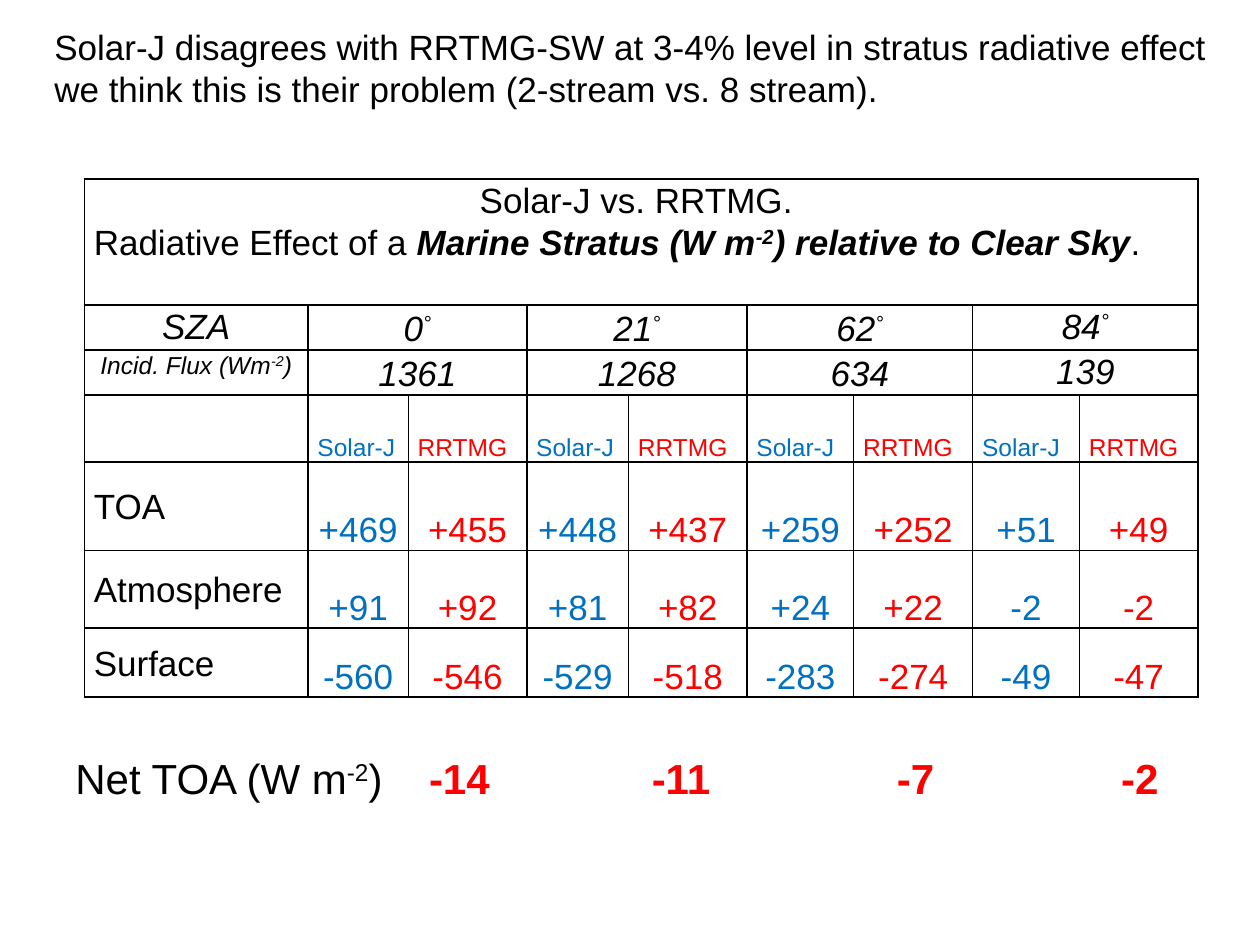
"""Build a slide comparing Solar-J and RRTMG radiative effects of marine stratus."""
from lxml.etree import SubElement
from pptx import Presentation
from pptx.dml.color import RGBColor
from pptx.enum.text import MSO_ANCHOR, MSO_AUTO_SIZE, PP_ALIGN
from pptx.oxml.ns import qn
from pptx.util import Cm, Pt

COLORS = {"text": "000000", "solar": "0070C0", "rrtmg": "FF0000"}
MODELS = [("Solar-J", "solar"), ("RRTMG", "rrtmg")]
COL_WIDTHS = [4.51, 2.02, 2.39, 2.05, 2.39, 2.15, 2.4, 2.15, 2.39]
ROW_HEIGHTS = [2.54, 0.85, 0.89, 1.35, 1.78, 1.57, 1.39]
ANGLES = ["0", "21", "62", "84"]
FLUXES = ["1361", "1268", "634", "139"]
EFFECTS = [
    ("TOA", ["+469", "+455", "+448", "+437", "+259", "+252", "+51", "+49"]),
    ("Atmosphere", ["+91", "+92", "+81", "+82", "+24", "+22", "-2", "-2"]),
    ("Surface", ["-560", "-546", "-529", "-518", "-283", "-274", "-49", "-47"]),
]
NET_TOA = ["-14", "-11", "-7", "-2"]
NET_TABS = [7.13, 11.62, 16.56, 21.08]
SUP = {"sup": True}


class Deck:
    def __init__(self, width, height, font="Arial"):
        self.font = font
        self.prs = Presentation()
        self.prs.slide_width, self.prs.slide_height = Cm(width), Cm(height)
        self.s = self.prs.slides.add_slide(self.prs.slide_layouts[5])

    def style(self, r, size=20, color="text", bold=False, italic=False, sup=False):
        f = r.font
        f.name, f.size, f.bold, f.italic = self.font, Pt(size), bold, italic
        f.color.rgb = RGBColor.from_string(COLORS[color])
        if sup:
            r._r.get_or_add_rPr().set("baseline", "30000")

    def add_runs(self, p, runs, align=PP_ALIGN.LEFT, **base):
        p.alignment = align
        for text, extra in runs:
            r = p.add_run()
            r.text = text
            self.style(r, **{**base, **extra})

    def title(self, text, x, y, w, h, size=20):
        sp = self.s.shapes.title
        sp.left, sp.top, sp.width, sp.height = Cm(x), Cm(y), Cm(w), Cm(h)
        tf = sp.text_frame
        tf.text = text
        tf.vertical_anchor = MSO_ANCHOR.TOP
        tf.word_wrap = True
        tf.auto_size = MSO_AUTO_SIZE.SHAPE_TO_FIT_TEXT
        p = tf.paragraphs[0]
        p.alignment = PP_ALIGN.LEFT
        for r in p.runs:
            self.style(r, size)
        for br in p._p.findall(qn("a:br")):
            SubElement(br, qn("a:rPr"), sz=str(size * 100))

    def tabbed_text(self, runs, x, y, w, h, tabs, size):
        tf = self.s.shapes.add_textbox(Cm(x), Cm(y), Cm(w), Cm(h)).text_frame
        tf.word_wrap = True
        tf.auto_size = MSO_AUTO_SIZE.SHAPE_TO_FIT_TEXT
        p = tf.paragraphs[0]
        self.add_runs(p, runs, size=size)
        tab_list = SubElement(p._p.get_or_add_pPr(), qn("a:tabLst"))
        for pos in tabs:
            SubElement(tab_list, qn("a:tab"), pos=str(Cm(pos)), algn="l")

    def table(self, x, y, widths, heights):
        frame = self.s.shapes.add_table(len(heights), len(widths), Cm(x), Cm(y),
                                        Cm(sum(widths)), Cm(sum(heights)))
        table = frame.table
        table.first_row = table.horz_banding = False
        for col, w in zip(table.columns, widths):
            col.width = Cm(w)
        for row, h in zip(table.rows, heights):
            row.height = Cm(h)
        for cell in table.iter_cells():
            cell.margin_left = cell.margin_right = Cm(0.19)
            cell.margin_top = cell.margin_bottom = 0
            self.border(cell)
            cell.fill.background()
        return table

    def border(self, cell):
        for side in ("lnL", "lnR", "lnT", "lnB"):
            ln = SubElement(cell._tc.get_or_add_tcPr(), qn(f"a:{side}"), w=str(Pt(1)))
            fill = SubElement(ln, qn("a:solidFill"))
            SubElement(fill, qn("a:srgbClr"), val=COLORS["text"])

    def cell(self, cell, paragraphs, anchor=MSO_ANCHOR.TOP, **base):
        cell.vertical_anchor = anchor
        tf = cell.text_frame
        for i, (align, runs) in enumerate(paragraphs):
            p = tf.add_paragraph() if i else tf.paragraphs[0]
            p.line_spacing = 1.07
            self.add_runs(p, runs, align, **base)


def fill_table(deck, table):
    left, center = PP_ALIGN.LEFT, PP_ALIGN.CENTER
    strong = {"bold": True, "italic": True}
    table.cell(0, 0).merge(table.cell(0, 8))
    deck.cell(table.cell(0, 0), [
        (center, [("Solar-J vs. RRTMG. ", {})]),
        (left, [("Radiative Effect of a ", {}), ("Marine Stratus (W m", strong),
                ("-2", {**strong, **SUP}), (") relative to Clear Sky", strong), (".", {})]),
    ])
    deck.cell(table.cell(1, 0), [(center, [("SZA", {})])], italic=True)
    flux_label = [("Incid. Flux (Wm", {}), ("-2", SUP), (")", {})]
    deck.cell(table.cell(2, 0), [(center, flux_label)], size=14, italic=True)
    for i, (angle, flux) in enumerate(zip(ANGLES, FLUXES)):
        col = 1 + 2 * i
        anchor = MSO_ANCHOR.TOP if i == len(ANGLES) - 1 else MSO_ANCHOR.MIDDLE
        for row, runs in ((1, [(angle, {}), ("°", SUP)]), (2, [(flux, {})])):
            table.cell(row, col).merge(table.cell(row, col + 1))
            deck.cell(table.cell(row, col), [(center, runs)], anchor, italic=True)
        for j, (model, color) in enumerate(MODELS):
            deck.cell(table.cell(3, col + j), [(left, [(model, {})])],
                      MSO_ANCHOR.BOTTOM, size=14, color=color)
    for row, (level, values) in enumerate(EFFECTS, 4):
        deck.cell(table.cell(row, 0), [(left, [(level, {})])], MSO_ANCHOR.MIDDLE)
        for i, value in enumerate(values):
            deck.cell(table.cell(row, i + 1), [(center, [(value, {})])],
                      MSO_ANCHOR.BOTTOM, color=MODELS[i % 2][1])


def main():
    deck = Deck(25.4, 19.05)
    deck.title("Solar-J disagrees with RRTMG-SW at 3-4% level in stratus radiative effect\v"
               "we think this is their problem (2-stream vs. 8 stream).", 0.84, 0.38, 24.13, 1.96)
    fill_table(deck, deck.table(1.7, 3.61, COL_WIDTHS, ROW_HEIGHTS))
    net = [("\t" + value, {"color": "rrtmg", "bold": True}) for value in NET_TOA]
    deck.tabbed_text([("Net TOA (W m", {}), ("-2", SUP), (")", {}), *net],
                     1.27, 15.04, 23.06, 1.27, NET_TABS, 24)
    deck.prs.save("out.pptx")


if __name__ == "__main__":
    main()
